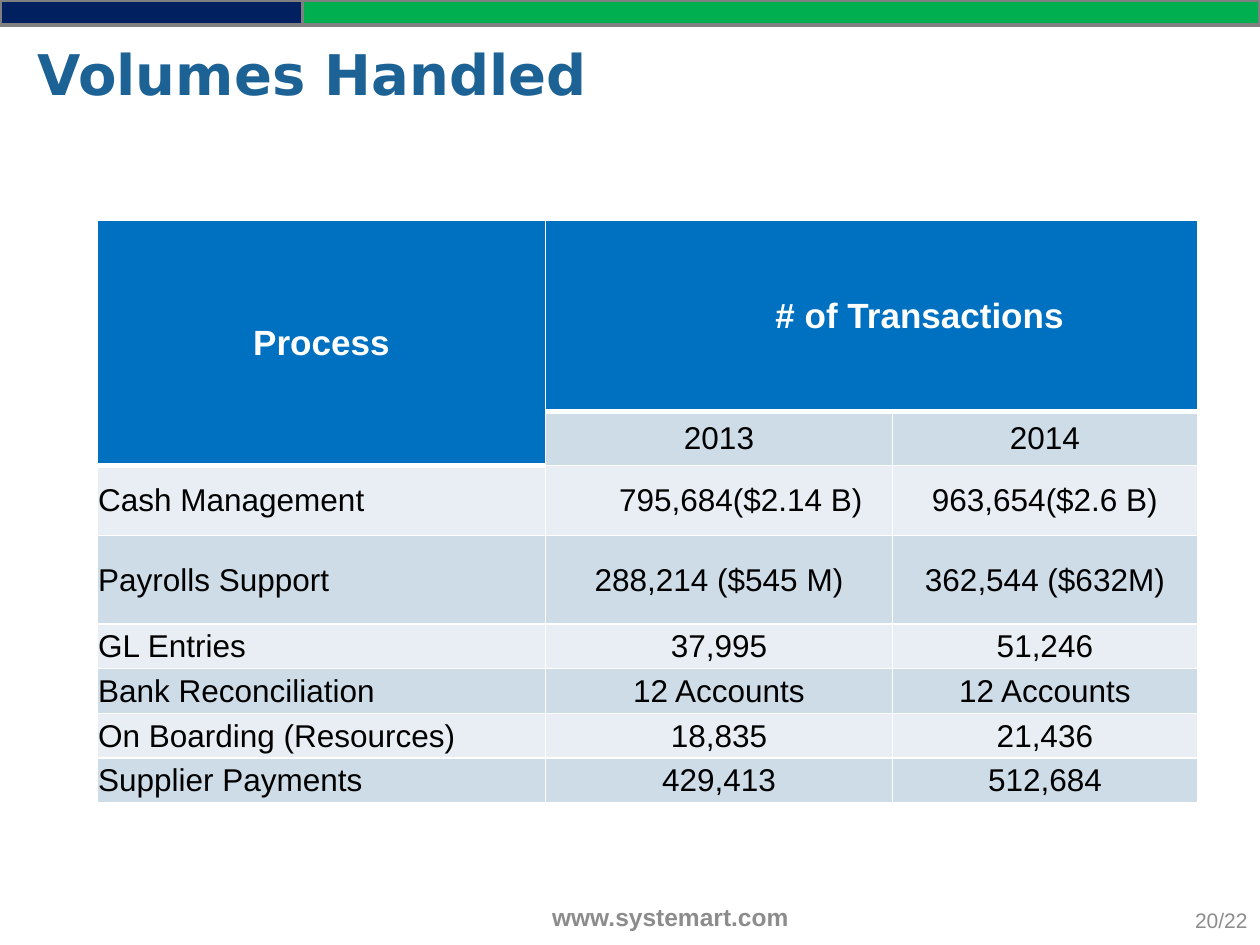
from dataclasses import dataclass

from lxml.etree import SubElement
from pptx import Presentation
from pptx.dml.color import RGBColor
from pptx.enum.shapes import MSO_SHAPE
from pptx.enum.text import MSO_ANCHOR as Anchor, PP_ALIGN as Align
from pptx.oxml.ns import qn
from pptx.util import Cm, Pt


@dataclass(frozen=True)
class Theme:
    body_font: str = "Arial"
    title_font: str = "DejaVu Sans"
    title_color: str = "1D6294"
    navy: str = "002060"
    green: str = "00B050"
    bar_line: str = "808080"
    header: str = "0070C0"
    bands: tuple = ("E8EEF3", "CEDCE7")
    white: str = "FFFFFF"
    black: str = "000000"
    footer: str = "8C8C8C"
    title_size: int = 32
    header_size: int = 20
    cell_size: int = 18
    address_size: int = 14
    number_size: int = 12
    thin: int = 1
    thick: int = 3


class SlideBuilder:
    def __init__(self, slide, theme):
        self.slide = slide
        self.theme = theme

    def set_text(self, text_frame, text, size, color, bold=False, align=Align.LEFT, font=None):
        text_frame.text = text
        paragraph = text_frame.paragraphs[0]
        paragraph.alignment = align
        for run in paragraph.runs:
            run.font.name = font or self.theme.body_font
            run.font.size = Pt(size)
            run.font.bold = bold
            run.font.color.rgb = RGBColor.from_string(color)

    def bar(self, width, color):
        shape = self.slide.shapes.add_shape(MSO_SHAPE.RECTANGLE, 0, 0, Cm(width), Cm(0.51))
        shape.shadow.inherit = False
        shape.fill.solid()
        shape.fill.fore_color.rgb = RGBColor.from_string(color)
        shape.line.color.rgb = RGBColor.from_string(self.theme.bar_line)
        shape.line.width = Pt(2)

    def title(self, text):
        title = self.slide.shapes.title
        title.left, title.top, title.width, title.height = Cm(0.51), Cm(0.48), Cm(25.35), Cm(1.98)
        title.text_frame.vertical_anchor = Anchor.MIDDLE
        self.set_text(title.text_frame, text, self.theme.title_size, self.theme.title_color,
                      bold=True, font=self.theme.title_font)

    def label(self, text, left, top, width, size, align, bold=False):
        box = self.slide.shapes.add_textbox(Cm(left), Cm(top), Cm(width), Cm(1.02))
        box.text_frame.word_wrap = True
        box.text_frame.vertical_anchor = Anchor.MIDDLE
        self.set_text(box.text_frame, text, size, self.theme.footer, bold, align)

    def borders(self, cell, top, bottom):
        properties = cell._tc.get_or_add_tcPr()
        widths = {"lnL": self.theme.thin, "lnR": self.theme.thin, "lnT": top, "lnB": bottom}
        for side, width in widths.items():
            line = SubElement(properties, qn(f"a:{side}"), w=str(Pt(width)))
            fill = SubElement(line, qn("a:solidFill"))
            SubElement(fill, qn("a:srgbClr"), val=self.theme.white)

    def cell(self, cell, text, row, column):
        theme = self.theme
        is_header = row == 0
        self.borders(cell, theme.thick if row == 1 else theme.thin,
                     theme.thick if is_header else theme.thin)
        cell.fill.solid()
        cell.fill.fore_color.rgb = RGBColor.from_string(
            theme.header if is_header else theme.bands[row % 2])
        cell.margin_left = cell.margin_right = cell.margin_top = Cm(0.02)
        cell.margin_bottom = 0
        cell.vertical_anchor = Anchor.MIDDLE
        if text:
            self.set_text(cell.text_frame, text,
                          theme.header_size if is_header else theme.cell_size,
                          theme.white if is_header else theme.black, is_header,
                          Align.LEFT if column == 0 and not is_header else Align.CENTER)

    def table(self, rows, left, top, widths, heights):
        frame = self.slide.shapes.add_table(len(rows), len(widths), Cm(left), Cm(top),
                                            Cm(sum(widths)), Cm(sum(heights)))
        table = frame.table
        for column, width in zip(table.columns, widths):
            column.width = Cm(width)
        for row, height in zip(table.rows, heights):
            row.height = Cm(height)
        for row_index, values in enumerate(rows):
            for column_index, text in enumerate(values):
                self.cell(table.cell(row_index, column_index), text, row_index, column_index)
        return table


VOLUMES = [
    ("Process", "# of Transactions", ""),
    ("", "2013", "2014"),
    ("Cash Management", "795,684($2.14 B)", "963,654($2.6 B)"),
    ("Payrolls Support", "288,214 ($545 M)", "362,544 ($632M)"),
    ("GL Entries", "37,995", "51,246"),
    ("Bank Reconciliation", "12 Accounts", "12 Accounts"),
    ("On Boarding (Resources)", "18,835", "21,436"),
    ("Supplier Payments", "429,413", "512,684"),
]


def main():
    theme = Theme()
    presentation = Presentation()
    presentation.slide_width, presentation.slide_height = Cm(25.4), Cm(19.05)
    slide = presentation.slides.add_slide(presentation.slide_layouts[5])
    builder = SlideBuilder(slide, theme)

    builder.bar(25.4, theme.green)
    builder.bar(6.1, theme.navy)
    builder.title("Volumes Handled")

    table = builder.table(VOLUMES, 1.96, 4.45, widths=[9.04, 6.99, 6.15],
                          heights=[3.84, 1.09, 1.42, 1.78] + [0.9] * 4)
    table.cell(0, 0).merge(table.cell(1, 0))
    table.cell(0, 1).merge(table.cell(0, 2))
    table.cell(0, 1).margin_left = Cm(1.96)
    table.cell(2, 1).margin_left = Cm(0.9)

    builder.label("www.systemart.com", 8.92, 17.98, 9.19, theme.address_size,
                  Align.CENTER, bold=True)
    builder.label("20/22", 15.88, 18.03, 9.52, theme.number_size, Align.RIGHT)
    presentation.save("out.pptx")


if __name__ == "__main__":
    main()
